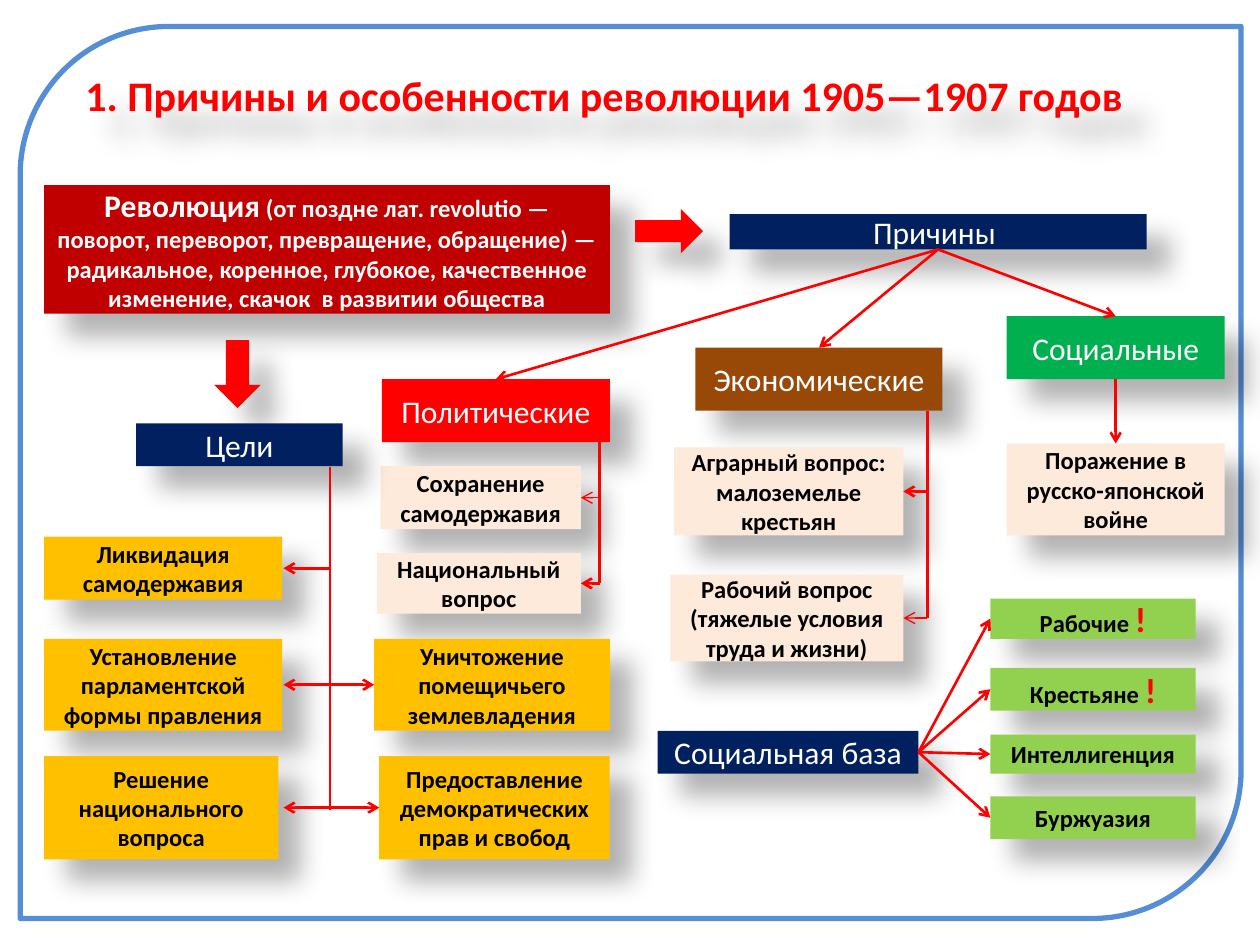
from lxml import etree
from pptx import Presentation
from pptx.dml.color import RGBColor
from pptx.enum import shapes, text
from pptx.oxml import ns
from pptx.util import Inches, Pt

COLORS = {
    "frame": "558ED5", "red": "FF0000", "crimson": "C00000", "navy": "002060",
    "brown": "984807", "green": "00B050", "lime": "92D050", "amber": "FFC000",
    "cream": "FDEADA", "white": "FFFFFF", "black": "000000",
}
SHAPE = shapes.MSO_SHAPE


def color(name):
    """Return the named colour."""
    return RGBColor.from_string(COLORS[name])


def add_element(parent, tag, **attributes):
    """Append a DrawingML element to its parent."""
    return etree.SubElement(parent, ns.qn(tag), attributes)


def cast_shadow(box):
    """Give a box the soft shadow that falls to the lower right."""
    effects = add_element(box._element.spPr, "a:effectLst")
    shadow = add_element(effects, "a:outerShdw", blurRad=str(Pt(15)), dist=str(Pt(18)),
                         dir="2700000", algn="tl", rotWithShape="0")
    tint = add_element(shadow, "a:srgbClr", val=COLORS["black"])
    add_element(tint, "a:alpha", val="30000")


def write(box, spans):
    """Write centred spans of (text, size, colour, bold) into a box."""
    frame = box.text_frame
    frame.word_wrap = True
    frame.vertical_anchor = text.MSO_ANCHOR.MIDDLE
    para = frame.paragraphs[0]
    para.alignment = text.PP_ALIGN.CENTER
    for words, size, ink, bold in spans:
        span = para.add_run()
        span.text = words
        span.font.name = "Calibri"
        span.font.size = Pt(size)
        span.font.bold = bold
        span.font.color.rgb = color(ink)


def add_block(page, left, top, width, height, fill, spans=(), kind=SHAPE.RECTANGLE):
    """Add a filled shape with a shadow and optional text."""
    block = page.shapes.add_shape(kind, Inches(left), Inches(top), Inches(width), Inches(height))
    block.fill.solid()
    block.fill.fore_color.rgb = color(fill)
    block.line.fill.background()
    cast_shadow(block)
    if spans:
        write(block, spans)
    return block


def add_heading(page, left, top, width, height, fill, words):
    """Add a block with a white heading."""
    return add_block(page, left, top, width, height, fill, [(words, 18, "white", False)])


def add_item(page, left, top, width, height, fill, words, mark=""):
    """Add a block with bold black text and an optional red mark."""
    spans = [(words, 14, "black", True)]
    if mark:
        spans.append((mark, 20, "red", True))
    return add_block(page, left, top, width, height, fill, spans)


def spot(block, across, down):
    """Return the point at the given fractions of a block."""
    return block.left + int(block.width * across), block.top + int(block.height * down)


def add_line(page, start, end, arrow=True, weight=1.5):
    """Join two points with a red line."""
    line = page.shapes.add_connector(shapes.MSO_CONNECTOR.STRAIGHT, *start, *end)
    line.line.color.rgb = color("red")
    line.line.width = Pt(weight)
    if arrow:
        add_element(line.line._get_or_add_ln(), "a:tailEnd", type="arrow")
    add_element(line._element.spPr, "a:effectLst")


def add_frame(page, left, top, width, height):
    """Draw the slide border and the title inside it."""
    border = page.shapes.add_shape(SHAPE.ROUND_2_DIAG_RECTANGLE, Inches(left), Inches(top),
                                   Inches(width), Inches(height))
    border.shadow.inherit = False
    border.fill.background()
    border.line.color.rgb = color("frame")
    border.line.width = Pt(3)
    title = page.shapes.add_textbox(Inches(left + 0.04), Inches(top + 0.15),
                                    Inches(width - 0.5), Inches(0.79))
    write(title, [("1. Причины и особенности революции 1905—1907 годов", 24, "red", True)])
    cast_shadow(title)


def add_definition(page, left, top, width, height):
    """Place the definition and its two block arrows."""
    add_block(page, left, top, width, height, "crimson", [
        ("Революция", 18, "white", True),
        (" (от поздне лат. revolutio — поворот, переворот, превращение, обращение) — "
         "радикальное, коренное, глубокое, качественное изменение, скачок  в развитии общества",
         14, "white", True),
    ])
    add_block(page, left + width + 0.2, top + 0.19, 0.54, 0.35, "red", kind=SHAPE.RIGHT_ARROW)
    add_block(page, left + 1.35, top + height + 0.21, 0.37, 0.54, "red", kind=SHAPE.DOWN_ARROW)


def add_goals(page, left, top, width, height):
    """Place the goals on both sides of a vertical trunk."""
    add_heading(page, left + 0.73, top, 1.64, 0.34, "navy", "Цели")
    trunk = Inches(left + 2.27)
    add_line(page, (trunk, Inches(top + 0.35)), (trunk, Inches(top + height - 0.39)), arrow=False)
    rows = [
        (0.9, 0.5, [(1.89, "Ликвидация самодержавия")]),
        (1.71, 0.73, [(1.89, "Установление парламентской формы правления"),
                      (1.87, "Уничтожение помещичьего землевладения")]),
        (2.64, 0.82, [(1.86, "Решение национального вопроса"),
                      (1.83, "Предоставление демократических прав и свобод")]),
    ]
    for offset, tall, goals in rows:
        for side, (wide, words) in enumerate(goals):
            start = left + side * (width - wide)
            goal = add_item(page, start, top + offset, wide, tall, "amber", words)
            x, y = spot(goal, 1 - side, 0.5)
            add_line(page, (trunk, y), (x if side else Inches(left + 1.9), y))


def add_causes(page, left, top, width, height):
    """Place the causes as three columns below their heading."""
    root = add_heading(page, left + 2.8, top, 3.31, 0.28, "navy", "Причины ")
    columns = [
        ("Политические", "red", (0.04, 1.31, 1.81, 0.5), 0.08, [
            ((0.03, 2.0, 1.59, 0.5), "Сохранение самодержавия", 0.75),
            ((0, 2.69, 1.62, 0.48), "Национальный вопрос", 1.5)]),
        ("Экономические", "brown", (2.53, 1.06, 1.96, 0.5), 0.12, [
            ((2.36, 1.85, 1.82, 0.7), "Аграрный вопрос: малоземелье крестьян", 1.5),
            ((2.33, 2.86, 1.85, 0.69), "Рабочий вопрос (тяжелые условия труда и жизни)", 0.75)]),
        ("Социальные", "green", (width - 1.73, 0.81, 1.73, 0.5), 0, [
            ((width - 1.73, 1.82, 1.73, 0.73), "Поражение в русско-японской войне", 1.5)]),
    ]
    for name, fill, (x, y, wide, tall), inset, entries in columns:
        head = add_heading(page, left + x, top + y, wide, tall, fill, name)
        add_line(page, spot(root, 0.5, 1), spot(head, 0.5, 0))
        items = [(add_item(page, left + dx, top + dy, w, h, "cream", words), weight)
                 for (dx, dy, w, h), words, weight in entries]
        if not inset:
            add_line(page, spot(head, 0.5, 1), spot(items[0][0], 0.5, 0))
            continue
        trunk = head.left + head.width - Inches(inset)
        add_line(page, (trunk, head.top + head.height), (trunk, spot(items[-1][0], 1, 0.5)[1]),
                 arrow=False)
        for item, weight in items:
            end = spot(item, 1, 0.5)
            add_line(page, (trunk, end[1]), end, weight=weight)


def add_social_base(page, left, top, width, height):
    """Place the social base with arrows fanning out to its groups."""
    base = add_heading(page, left, top + 1.05, 2.07, 0.34, "navy", "Социальная база")
    groups = [(0, 0.32, "Рабочие ", "!"), (0.55, 0.34, "Крестьяне ", "!"),
              (1.08, 0.31, "Интеллигенция", ""), (height - 0.34, 0.34, "Буржуазия", "")]
    for offset, tall, words, mark in groups:
        group = add_item(page, left + width - 1.63, top + offset, 1.63, tall, "lime", words, mark)
        add_line(page, spot(base, 1, 0.5), spot(group, 0, 0.5))


def main():
    """Build the slide and save the deck."""
    deck = Presentation()
    deck.slide_width, deck.slide_height = Inches(10), Inches(7.5)
    page = deck.slides.add_slide(deck.slide_layouts[6])
    add_frame(page, 0.16, 0.21, 9.69, 7.08)
    add_definition(page, 0.35, 1.47, 4.49, 1.02)
    add_causes(page, 2.99, 1.7, 6.73, 3.55)
    add_goals(page, 0.35, 3.36, 4.49, 3.46)
    add_social_base(page, 5.22, 4.75, 4.27, 1.91)
    deck.save("out.pptx")


if __name__ == "__main__":
    main()
